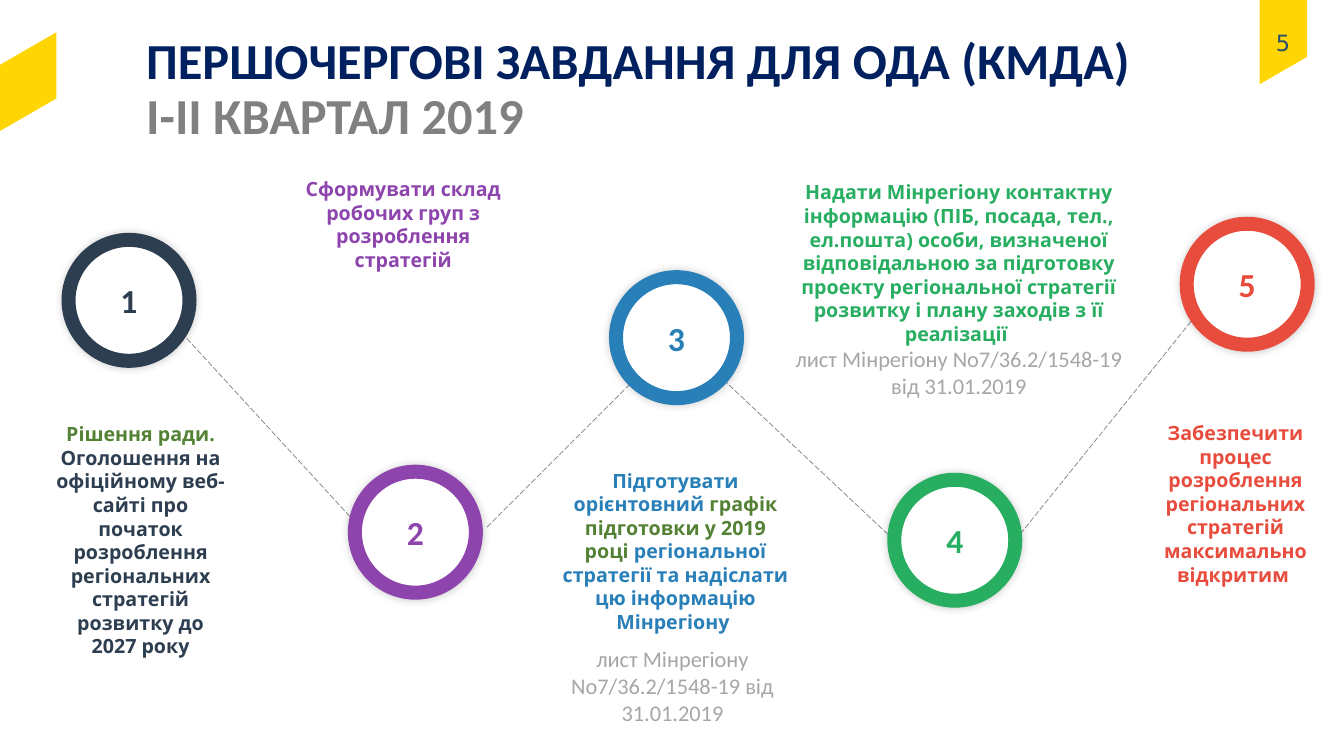
import pptx
import pptx.util
import pptx.dml.color
import pptx.enum.dml
import pptx.enum.shapes
import pptx.enum.text
import pptx.oxml
import pptx.oxml.ns

PX = 9144  # EMU per px, 100 px to the inch
SHAPE = pptx.enum.shapes.MSO_SHAPE
ALIGN = pptx.enum.text.PP_ALIGN
NAVY, GREY, PALE, YELLOW = "002060", "808080", "A6A6A6", "FFD503"
DARK, PURPLE, BLUE, GREEN, RED = "2D3E50", "8D44AD", "297FB8", "27AE61", "E84C3D"
OLIVE = "548235"
HEAD = {"name": "Calibri", "size": pptx.util.Pt(36), "bold": True}
BOLD = {"name": "Open Sans", "size": pptx.util.Pt(14), "bold": True}
NOTE = {"name": "Calibri", "size": pptx.util.Pt(16), "bold": False}
DIGIT = {"name": "Calibri", "size": pptx.util.Pt(24), "bold": True}
PAGE = {"name": "DejaVu Sans", "size": pptx.util.Pt(16), "bold": False}
LETTER = "лист Мінрегіону No7/36.2/1548-19 від 31.01.2019"


def tint(code):
    return pptx.dml.color.RGBColor.from_string(code)


def write(shape, paras, align=ALIGN.CENTER, space=1.0, inset=None, anchor="TOP"):
    """Fill a shape with paragraphs, each a list of (text, colour, format)."""
    frame = shape.text_frame
    look = {"word_wrap": True, "auto_size": pptx.enum.text.MSO_AUTO_SIZE.NONE,
            "vertical_anchor": pptx.enum.text.MSO_ANCHOR[anchor]}
    if inset is not None:
        for side in ("left", "top", "right", "bottom"):
            look["margin_" + side] = inset
    for key, value in look.items():
        setattr(frame, key, value)
    for i, runs in enumerate(paras):
        para = frame.add_paragraph() if i else frame.paragraphs[0]
        para.alignment, para.line_spacing = align, space
        for text, code, style in runs:
            run = para.add_run()
            run.text = text.rstrip("\n")
            for key, value in style.items():
                setattr(run.font, key, value)
            run.font.color.rgb = tint(code)
            if text.endswith("\n"):
                para.add_line_break()


deck = pptx.Presentation()
deck.slide_width, deck.slide_height = 1333 * PX, 750 * PX
slide = deck.slides.add_slide(deck.slide_layouts[5])
shapes = slide.shapes

# Title
title = shapes.title
place = {"left": 135, "top": 31, "width": 1178, "height": 69}
for key, value in place.items():
    setattr(title, key, value * PX)
write(title, [[("ПЕРШОЧЕРГОВІ ЗАВДАННЯ ДЛЯ ОДА (КМДА)", NAVY, HEAD)],
              [("І-ІІ КВАРТАЛ 2019", GREY, HEAD)]], ALIGN.LEFT, 0.9)

# Yellow ribbons and page number
for box in ((-21, 53, 98, 56), (1216, 3, 114, 47)):
    band = shapes.add_shape(SHAPE.PARALLELOGRAM, *[n * PX for n in box])
    band.adjustments[0] = 0.578
    band.rotation = 90
    band.element.spPr.xfrm.set("flipH", "1")
    band.shadow.inherit = False
    band.fill.solid()
    band.fill.fore_color.rgb = tint(YELLOW)
    band.line.fill.background()
page = shapes.add_textbox(*[n * PX for n in (1249, 32, 47, 36)])
write(page, [[("5", "274D6F", PAGE)]], space=0.9, inset=0)

# Task texts
tasks = [
    ((45, 414, 189, 175), [
        [("Рішення ради.", OLIVE, BOLD)],
        [("Оголошення на офіційному веб-сайті про початок розроблення "
          "регіональних стратегій розвитку до 2027 року", DARK, BOLD)]]),
    ((285, 171, 230, 81), [
        [("Сформувати склад робочих груп з розроблення стратегій", PURPLE, BOLD)]]),
    ((546, 460, 248, 128), [
        [("Підготувати орієнтовний ", BLUE, BOLD),
         ("графік підготовки у 2019 році ", OLIVE, BOLD),
         ("регіональної стратегії та надіслати цю інформацію Мінрегіону ", BLUE, BOLD)]]),
    ((543, 635, 248, 91), [[(LETTER, PALE, NOTE)]]),
    ((772, 174, 358, 229), [
        [("Надати Мінрегіону контактну інформацію (ПІБ, посада, тел., ел.пошта) "
          "особи, визначеної відповідальною за підготовку проекту регіональної "
          "стратегії розвитку і плану заходів з її реалізації \n", GREEN, BOLD),
         (LETTER, PALE, NOTE)]]),
    ((1122, 413, 207, 175), [
        [("Забезпечити процес розроблення регіональних стратегій "
          "максимально відкритим ", RED, BOLD)]]),
]
for box, paras in tasks:
    write(shapes.add_textbox(*[n * PX for n in box]), paras)

# Dashed links between the steps
links = [(180, 330, 353, 519), (483, 523, 672, 334),
         (672, 334, 887, 536), (1007, 536, 1186, 313)]
for ends in links:
    link = shapes.add_connector(pptx.enum.shapes.MSO_CONNECTOR.STRAIGHT,
                                *[n * PX for n in ends])
    link.line.color.rgb = tint(GREY)
    link.line.width = pptx.util.Pt(0.5)
    link.line.dash_style = pptx.enum.dml.MSO_LINE.LONG_DASH
    link.element.spPr.append(pptx.oxml.parse_xml(
        "<a:effectLst %s/>" % pptx.oxml.ns.nsdecls("a")))

# Numbered rings with a soft shadow
GLOW = ('<a:effectLst %s><a:outerShdw blurRad="76200" dist="0" dir="13500000">'
        '<a:srgbClr val="000000"><a:alpha val="20000"/></a:srgbClr>'
        '</a:outerShdw></a:effectLst>' % pptx.oxml.ns.nsdecls("a"))
rings = [(68, 238, DARK), (352, 468, PURPLE), (611, 275, BLUE),
         (887, 476, GREEN), (1177, 222, RED)]
for i, (left, top, code) in enumerate(rings, 1):
    ring = shapes.add_shape(SHAPE.OVAL, left * PX, top * PX, 120 * PX, 120 * PX)
    ring.fill.solid()
    ring.fill.fore_color.rgb = tint("FFFFFF")
    ring.line.color.rgb = tint(code)
    ring.line.width = pptx.util.Pt(10)
    ring.element.spPr.append(pptx.oxml.parse_xml(GLOW))
    write(ring, [[(str(i), code, DIGIT)]], inset=0, anchor="MIDDLE")

deck.save("out.pptx")
